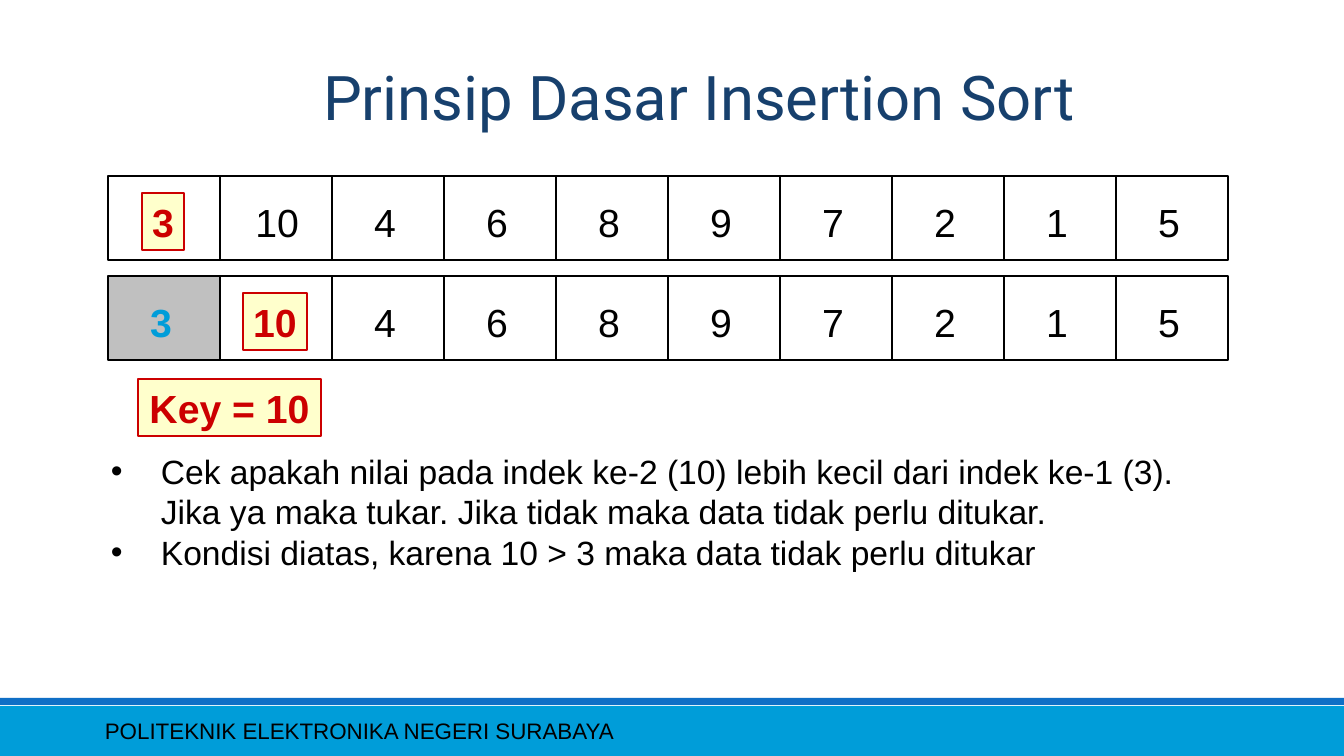
from lxml.etree import SubElement
from pptx import Presentation
from pptx.dml.color import RGBColor
from pptx.enum.shapes import MSO_SHAPE as Preset
from pptx.enum.text import MSO_ANCHOR as Anchor, MSO_AUTO_SIZE as AutoSize, PP_ALIGN as Align
from pptx.oxml.ns import qn
from pptx.util import Pt

BLACK = RGBColor(0x00, 0x00, 0x00)
WHITE = RGBColor(0xFF, 0xFF, 0xFF)
NAVY = RGBColor(0x17, 0x40, 0x6D)
BLUE = RGBColor(0x0F, 0x6F, 0xC6)
SKY = RGBColor(0x00, 0x9D, 0xD9)
GRAY = RGBColor(0xC0, 0xC0, 0xC0)
RED = RGBColor(0xCC, 0x00, 0x00)
CREAM = RGBColor(0xFF, 0xFF, 0xCC)

SLIDE_W, SLIDE_H = 1344, 756
EMU_PER_PX = 12192000 / SLIDE_W
ROW_LEFT, CELL_W, CELL_H = 108, 112, 84
VALUE_DROP, VALUE_H = 17, 57
VALUE_WIDTHS = {1: 42, 2: 64}
INDENT = 50

NUMBERS = ["3", "10", "4", "6", "8", "9", "7", "2", "1", "5"]
PLAIN = (BLACK, None, None)
SORTED = (SKY, GRAY, None)
KEY = (RED, CREAM, RED)
NOTES = [
    "Cek apakah nilai pada indek ke-2 (10) lebih kecil dari indek ke-1 (3). "
    "Jika ya maka tukar. Jika tidak maka data tidak perlu ditukar.",
    "Kondisi diatas, karena 10 > 3 maka data tidak perlu ditukar",
]


def px(length):
    return round(length * EMU_PER_PX)


def add_rect(shapes, box, fill=None, line=None):
    rect = shapes.add_shape(Preset.RECTANGLE, *map(px, box))
    rect.shadow.inherit = False
    if fill is None:
        rect.fill.background()
    else:
        rect.fill.solid()
        rect.fill.fore_color.rgb = fill
    if line is None:
        rect.line.fill.background()
    else:
        rect.line.color.rgb = line
        rect.line.width = Pt(1.5)
    return rect


def add_run(paragraph, text, size, color, font="Arial", bold=False):
    run = paragraph.add_run()
    run.text = text
    run.font.size = Pt(size)
    run.font.name = font
    run.font.bold = bold
    run.font.color.rgb = color


def add_line_of_text(shapes, box, text, size, color, font="Arial", align=Align.LEFT):
    frame = shapes.add_textbox(*map(px, box)).text_frame
    frame.word_wrap = True
    frame.vertical_anchor = Anchor.MIDDLE
    frame.paragraphs[0].alignment = align
    add_run(frame.paragraphs[0], text, size, color, font)


def add_value(shapes, box, text, style):
    color, fill, line = style
    if fill is None:
        holder = shapes.add_textbox(*map(px, box))
    else:
        holder = add_rect(shapes, box, fill, line)
    frame = holder.text_frame
    frame.word_wrap = False
    frame.auto_size = AutoSize.SHAPE_TO_FIT_TEXT
    frame.vertical_anchor = Anchor.TOP
    frame.paragraphs[0].alignment = Align.CENTER
    add_run(frame.paragraphs[0], text, 28, color, bold=fill is not None)


def add_array(shapes, top, styles, fills, shifts):
    """Draw one state of the array; styles, fills and shifts are keyed by index."""
    array = shapes.add_group_shape().shapes
    lefts = [ROW_LEFT + i * CELL_W for i in range(len(NUMBERS))]
    for i, left in enumerate(lefts):
        add_rect(array, (left, top, CELL_W, CELL_H), fills.get(i), BLACK)
    for i, (left, number) in enumerate(zip(lefts, NUMBERS)):
        width = VALUE_WIDTHS[len(number)]
        value_left = left + (CELL_W - width) // 2 + shifts.get(i, -3)
        box = (value_left, top + VALUE_DROP, width, VALUE_H)
        add_value(array, box, number, styles.get(i, PLAIN))


def add_bullets(shapes, box, notes):
    frame = shapes.add_textbox(*map(px, box)).text_frame
    frame.word_wrap = True
    for i, note in enumerate(notes):
        paragraph = frame.add_paragraph() if i else frame.paragraphs[0]
        properties = paragraph._p.get_or_add_pPr()
        properties.set("marL", str(px(INDENT)))
        properties.set("indent", str(-px(INDENT)))
        SubElement(properties, qn("a:buFont")).set("typeface", "Arial")
        SubElement(properties, qn("a:buChar")).set("char", "•")
        add_run(paragraph, note, 24, BLACK)


def main():
    deck = Presentation()
    deck.slide_width, deck.slide_height = px(SLIDE_W), px(SLIDE_H)
    shapes = deck.slides.add_slide(deck.slide_layouts[6]).shapes

    add_rect(shapes, (0, 706, SLIDE_W, 50), SKY)
    add_rect(shapes, (0, 698, SLIDE_W, 7), BLUE)
    add_line_of_text(shapes, (95, 711, 848, 40),
                     "POLITEKNIK ELEKTRONIKA NEGERI SURABAYA", 16, BLACK)
    add_bullets(shapes, (101, 446, 1131, 132), NOTES)
    add_array(shapes, 176, {0: KEY}, {}, {0: -1, 1: 1})
    last = len(NUMBERS) - 1
    add_array(shapes, 276, {0: SORTED, 1: KEY}, {0: GRAY, last: WHITE}, {1: -1})
    add_value(shapes, (138, 379, 183, VALUE_H), "Key = 10", KEY)
    add_line_of_text(shapes, (127, 33, 1145, 126), "Prinsip Dasar Insertion Sort",
                     44, NAVY, "Roboto", Align.CENTER)
    deck.save("out.pptx")


if __name__ == "__main__":
    main()
